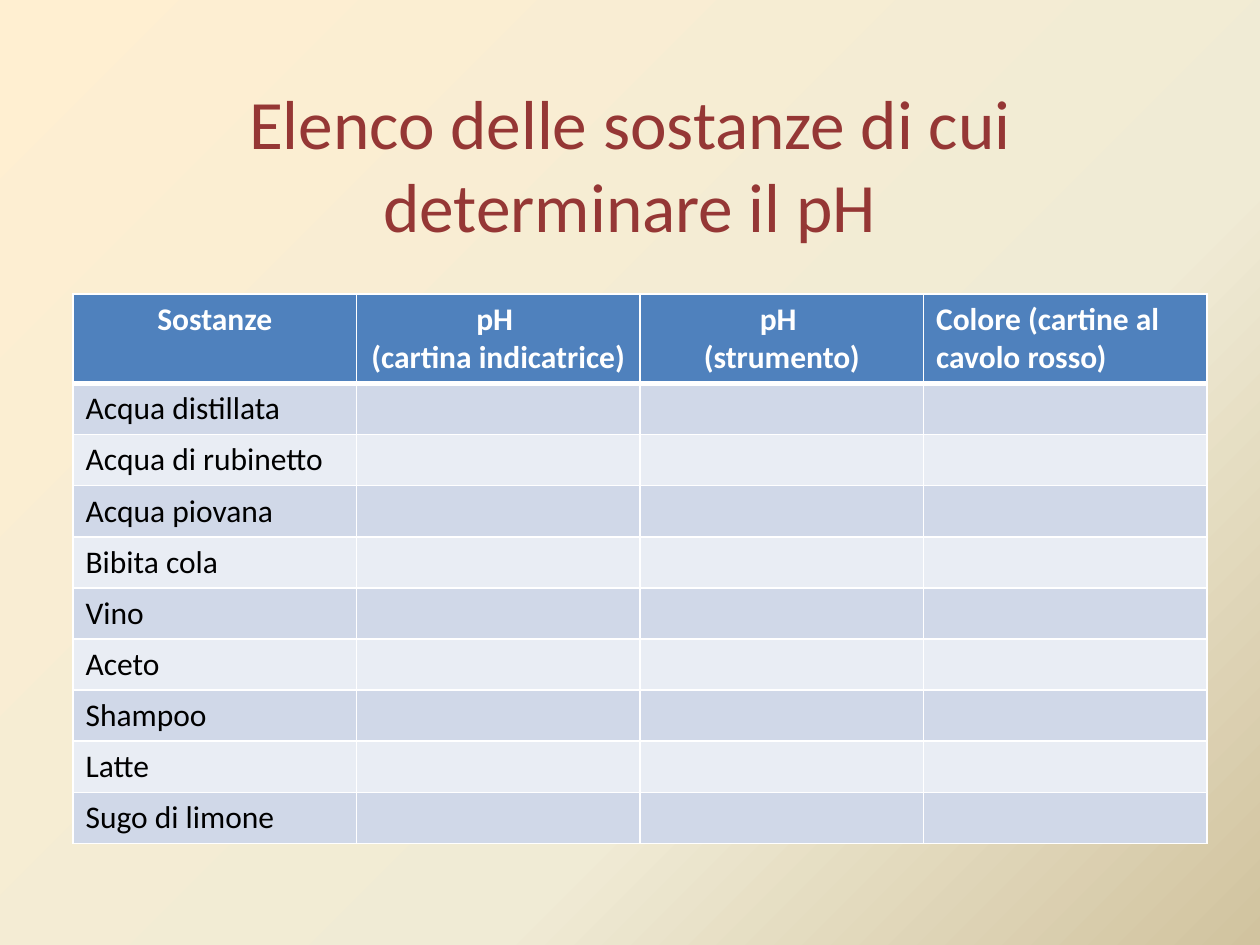
from copy import deepcopy
from dataclasses import dataclass

from lxml.etree import SubElement
from pptx import Presentation
from pptx.dml.color import RGBColor
from pptx.enum.text import MSO_ANCHOR as Anchor, MSO_AUTO_SIZE as AutoSize, PP_ALIGN as Align
from pptx.oxml.ns import qn
from pptx.util import Emu, Pt


@dataclass(frozen=True)
class Theme:
    font: str = "Calibri"
    title_size: float = 39.6
    table_size: float = 18
    title: str = "953735"
    header: str = "4F81BD"
    bands: tuple = ("D0D8E8", "E9EDF4")
    rule: str = "FFFFFF"
    header_text: str = "FFFFFF"
    body_text: str = "000000"
    backdrop: tuple = ((0, "FFEFD1"), (0.65, "F0EBD5"), (1, "D1C39F"))


class SlideBuilder:
    """Draws styled elements on one slide, with lengths in px."""

    def __init__(self, slide, theme):
        self.slide = slide
        self.theme = theme

    def px(self, length):
        return Emu(round(length * 914400 / 126))

    def background(self):
        fill = self.slide.background.fill
        fill.gradient()
        fill.gradient_angle = 315
        stops = self.slide.element.find(".//" + qn("a:gsLst"))
        stops.append(deepcopy(stops[-1]))
        for stop, (position, color) in zip(fill.gradient_stops, self.theme.backdrop):
            stop.position = position
            stop.color.rgb = RGBColor.from_string(color)

    def set_text(self, frame, text, size, color, align, bold=False):
        frame.text = text
        for paragraph in frame.paragraphs:
            paragraph.alignment = align
            font = paragraph.font
            font.name, font.size, font.bold = self.theme.font, Pt(size), bold
            font.color.rgb = RGBColor.from_string(color)

    def title(self, text, left, top, width, height):
        heading = self.slide.shapes.title
        heading.left, heading.top = self.px(left), self.px(top)
        heading.width, heading.height = self.px(width), self.px(height)
        frame = heading.text_frame
        frame.word_wrap = True
        frame.auto_size = AutoSize.NONE
        frame.vertical_anchor = Anchor.MIDDLE
        self.set_text(frame, text, self.theme.title_size, self.theme.title, Align.CENTER)

    def borders(self, cell, top, bottom):
        properties = cell._tc.get_or_add_tcPr()
        for side, points in (("L", 1), ("R", 1), ("T", top), ("B", bottom)):
            line = SubElement(properties, qn(f"a:ln{side}"), w=str(Pt(points)))
            SubElement(SubElement(line, qn("a:solidFill")), qn("a:srgbClr"), val=self.theme.rule)

    def cell(self, cell, text, row, align):
        theme = self.theme
        is_header = row == 0
        self.borders(cell, top=3 if row == 1 else 1, bottom=3 if is_header else 1)
        cell.fill.solid()
        fill = theme.header if is_header else theme.bands[(row - 1) % 2]
        cell.fill.fore_color.rgb = RGBColor.from_string(fill)
        color = theme.header_text if is_header else theme.body_text
        self.set_text(cell.text_frame, text, theme.table_size, color, align, is_header)

    def table(self, headers, substances, left, top, width, header_height, row_height):
        height = header_height + row_height * len(substances)
        grid = self.slide.shapes.add_table(
            len(substances) + 1, len(headers),
            self.px(left), self.px(top), self.px(width), self.px(height),
        ).table
        grid.horz_banding = False
        for row, line in enumerate(grid.rows):
            line.height = self.px(row_height if row else header_height)
            for column, (header, align) in enumerate(headers):
                if row == 0:
                    self.cell(line.cells[column], header, row, align)
                else:
                    text = substances[row - 1] if column == 0 else ""
                    self.cell(line.cells[column], text, row, Align.LEFT)


def main():
    deck = Presentation()
    page = SlideBuilder(deck.slides.add_slide(deck.slide_layouts[5]), Theme())
    deck.slide_width, deck.slide_height = page.px(1260), page.px(945)
    page.background()
    page.title("Elenco delle sostanze di cui determinare il pH", 63, 84, 1134, 158)
    headers = (
        ("Sostanze", Align.CENTER),
        ("pH \n(cartina indicatrice)", Align.CENTER),
        ("pH \n(strumento)", Align.CENTER),
        ("Colore (cartine al cavolo rosso)", Align.LEFT),
    )
    substances = (
        "Acqua distillata", "Acqua di rubinetto", "Acqua piovana",
        "Bibita cola", "Vino", "Aceto", "Shampoo", "Latte", "Sugo di limone",
    )
    page.table(headers, substances, 73, 294, 1134, header_height=89, row_height=51)
    deck.save("out.pptx")


if __name__ == "__main__":
    main()
